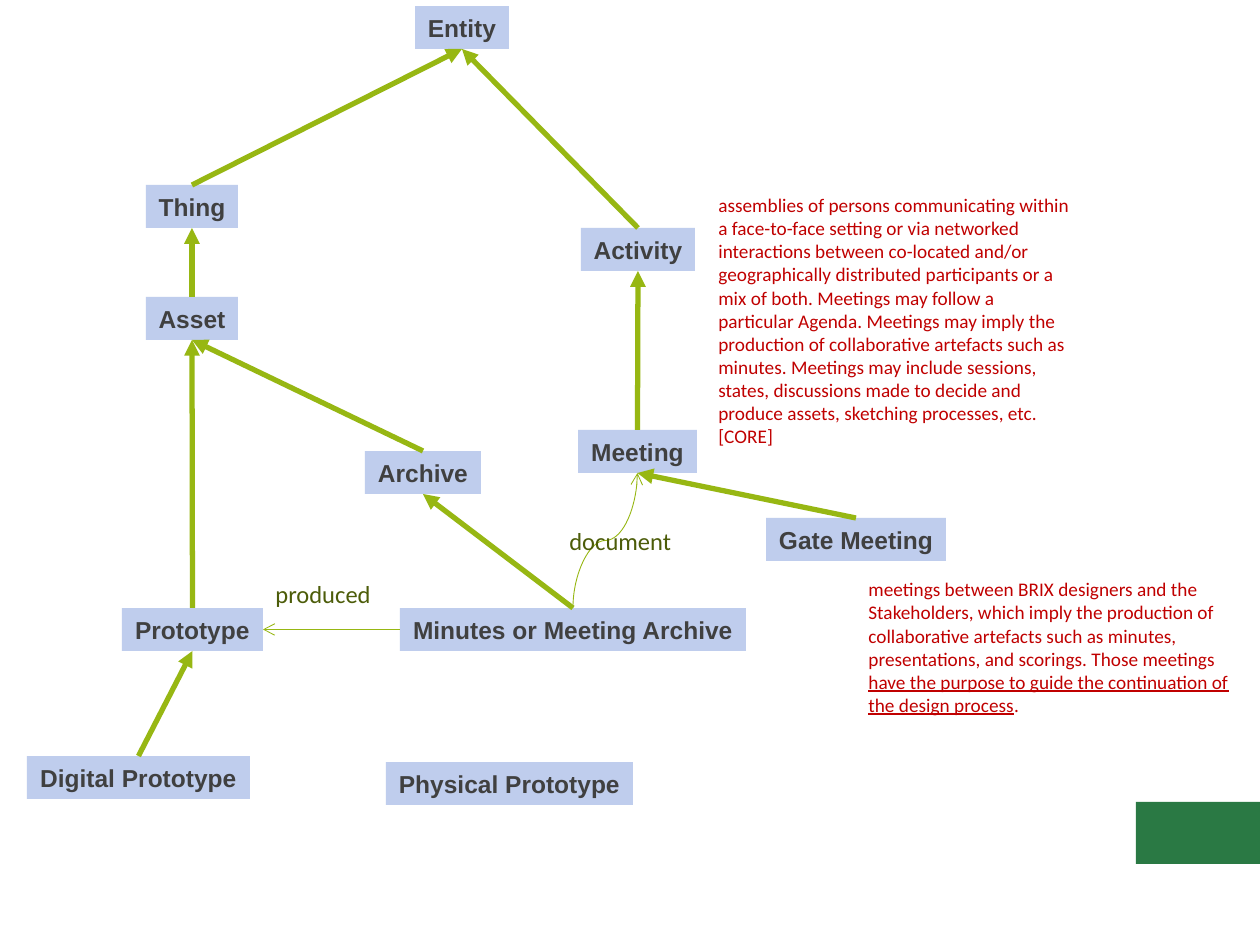
from lxml import etree
from pptx import Presentation
from pptx.dml.color import RGBColor
from pptx.enum.shapes import MSO_CONNECTOR, MSO_SHAPE
from pptx.enum.text import MSO_ANCHOR, MSO_AUTO_SIZE, PP_ALIGN
from pptx.oxml.ns import qn
from pptx.util import Emu, Pt

STRAIGHT, CURVE = MSO_CONNECTOR.STRAIGHT, MSO_CONNECTOR.CURVE
RECT = MSO_SHAPE.RECTANGLE
MIDDLE, CENTER, LEFT = MSO_ANCHOR.MIDDLE, PP_ALIGN.CENTER, PP_ALIGN.LEFT
GROW = MSO_AUTO_SIZE.SHAPE_TO_FIT_TEXT

BOX_BLUE = RGBColor(0xBF, 0xCD, 0xED)
BOX_TEXT = RGBColor(0x40, 0x40, 0x40)
LINE_GREEN = RGBColor(0x97, 0xB7, 0x13)
LABEL_GREEN = RGBColor(0x4C, 0x5C, 0x09)
NOTE_RED = RGBColor(0xC0, 0x00, 0x00)
CORNER_GREEN = RGBColor(0x2A, 0x79, 0x44)

BOX_FONT = {"name": "Arial", "size": Pt(14), "bold": True}
LABEL_FONT = {"name": "Calibri", "size": Pt(14)}
NOTE_FONT = {"name": "Calibri", "size": Pt(11)}

BOX_H = 43
CLASSES = {  # name: (left, top, width)
    "Entity": (415, 6, 94),
    "Thing": (146, 185, 92),
    "Asset": (146, 297, 92),
    "Activity": (581, 228, 114),
    "Archive": (365, 451, 116),
    "Meeting": (578, 430, 119),
    "Gate Meeting": (766, 518, 180),
    "Prototype": (122, 608, 141),
    "Minutes or Meeting Archive": (400, 608, 346),
    "Digital Prototype": (27, 756, 223),
    "Physical Prototype": (386, 762, 247),
}
SUBCLASSES = [  # (child, parent)
    ("Thing", "Entity"),
    ("Activity", "Entity"),
    ("Asset", "Thing"),
    ("Prototype", "Asset"),
    ("Archive", "Asset"),
    ("Meeting", "Activity"),
    ("Gate Meeting", "Meeting"),
    ("Minutes or Meeting Archive", "Archive"),
    ("Digital Prototype", "Prototype"),
]
LABELS = [("produced", (263, 572, 144, 43)), ("document", (557, 519, 144, 43))]
MEETING_NOTE = [(
    "assemblies of persons communicating within a face-to-face setting or via "
    "networked interactions between co-located and/or geographically distributed "
    "participants or a mix of both. Meetings may follow a particular Agenda. "
    "Meetings may imply the production of collaborative artefacts such as minutes. "
    "Meetings may include sessions, states, discussions made to decide and produce "
    "assets, sketching processes, etc.[CORE]", False)]
GATE_NOTE = [
    ("meetings between BRIX designers and the Stakeholders, which imply the "
     "production of collaborative artefacts such as minutes, presentations, and "
     "scorings. Those meetings ", False),
    ("have the purpose to guide the continuation of the design process", True),
    (".", False),
]


def px(n):
    return Emu(round(n * 914400 / 126))


def write(sp, runs, fmt, color, align, wrap):
    """Fill a shape with one paragraph of (text, underlined) runs."""
    tf = sp.text_frame
    tf.word_wrap, tf.auto_size, tf.vertical_anchor = wrap, GROW, MIDDLE
    p = tf.paragraphs[0]
    p.alignment = align
    for text, underlined in runs:
        r = p.add_run()
        r.text = text
        for key, value in fmt.items():
            setattr(r.font, key, value)
        r.font.color.rgb = color
        if underlined:
            r.font.underline = True


def add_rect(s, box, fill):
    sp = s.shapes.add_shape(RECT, *map(px, box))
    sp.shadow.inherit = False
    sp.fill.solid()
    sp.fill.fore_color.rgb = fill
    sp.line.fill.background()
    return sp


def add_text(s, box, runs, fmt, color):
    sp = s.shapes.add_textbox(*map(px, box))
    write(sp, runs, fmt, color, LEFT, True)


def add_arrow(s, kind, start, end, width, head):
    """Draw a connector with its arrowhead at the end point."""
    cx = s.shapes.add_connector(kind, *map(px, (*start, *end)))
    cx.line.color.rgb = LINE_GREEN
    cx.line.width = Pt(width)
    etree.SubElement(cx.line._get_or_add_ln(), qn("a:tailEnd"), type=head)
    etree.SubElement(cx._element.spPr, qn("a:effectLst"))
    return cx


def top_of(name):
    left, top, width = CLASSES[name]
    return left + width / 2, top


def bottom_of(name):
    x, top = top_of(name)
    return x, top + BOX_H


def add_rising_curve(s, start, end):
    """Draw an S-curve that leaves and arrives vertically, by a quarter turn."""
    mid_x, mid_y = (start[0] + end[0]) / 2, (start[1] + end[1]) / 2
    half_w, half_h = (start[1] - end[1]) / 2, (end[0] - start[0]) / 2
    cx = add_arrow(s, CURVE, (mid_x + half_w, mid_y + half_h),
                   (mid_x - half_w, mid_y - half_h), 0.5, "arrow")
    cx._element.spPr.find(qn("a:xfrm")).set("rot", str(90 * 60000))


def add_hierarchy(s):
    for name, (left, top, width) in CLASSES.items():
        sp = add_rect(s, (left, top, width, BOX_H), BOX_BLUE)
        write(sp, [(name, False)], BOX_FONT, BOX_TEXT, CENTER, False)
    for child, parent in SUBCLASSES:
        add_arrow(s, STRAIGHT, top_of(child), bottom_of(parent), 3, "triangle")


def add_relations(s):
    minutes = "Minutes or Meeting Archive"
    left, top, _ = CLASSES[minutes]
    target_left, _, target_width = CLASSES["Prototype"]
    y = top + BOX_H / 2
    add_arrow(s, STRAIGHT, (left, y), (target_left + target_width, y), 0.5, "arrow")
    add_rising_curve(s, top_of(minutes), bottom_of("Meeting"))
    for text, box in LABELS:
        add_text(s, box, [(text, False)], LABEL_FONT, LABEL_GREEN)


def add_notes(s):
    add_text(s, (706, 185, 378, 271), MEETING_NOTE, NOTE_FONT, NOTE_RED)
    add_text(s, (856, 571, 398, 152), GATE_NOTE, NOTE_FONT, NOTE_RED)


def main():
    prs = Presentation()
    prs.slide_width, prs.slide_height = px(1260), px(945)
    s = prs.slides.add_slide(prs.slide_layouts[6])
    add_rect(s, (1136, 802, 124, 62), CORNER_GREEN)
    add_hierarchy(s)
    add_relations(s)
    add_notes(s)
    prs.save("out.pptx")


if __name__ == "__main__":
    main()
